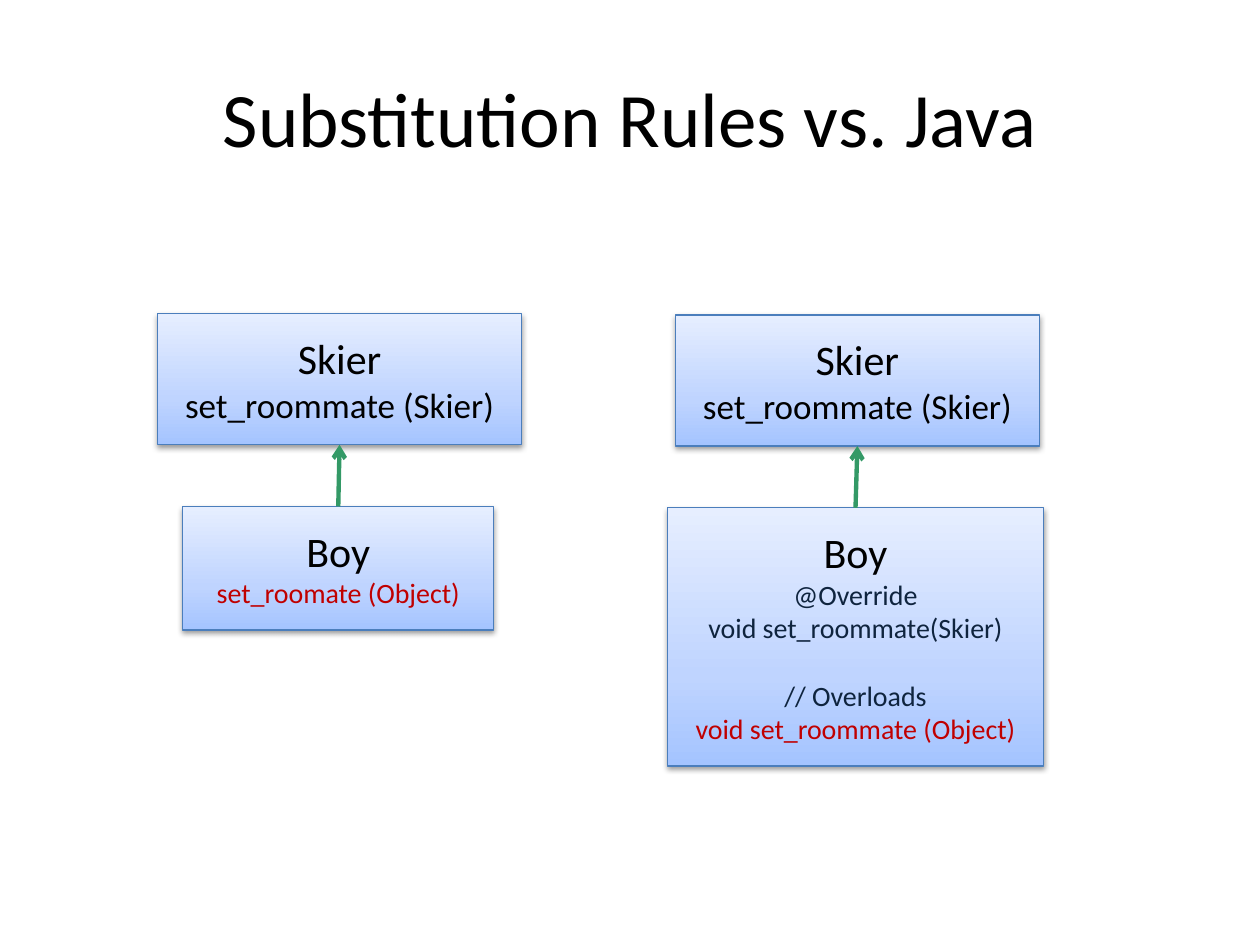
from copy import deepcopy

from lxml import etree
from pptx import Presentation
from pptx.dml.color import RGBColor
from pptx.enum.shapes import MSO_CONNECTOR, MSO_SHAPE
from pptx.enum.text import MSO_ANCHOR, MSO_AUTO_SIZE, PP_ALIGN
from pptx.oxml import parse_xml
from pptx.oxml.ns import nsdecls, qn
from pptx.util import Inches, Pt

COLORS = {
    "black": "000000",
    "navy": "0F243E",
    "red": "C00000",
    "border": "4B7EBC",
    "green": "339966",
}
GRADIENT = [(0, "A4C4FF"), (0.35, "BFD4FF"), (1, "E6EEFF")]
SHADOW = (
    f'<a:outerShdw {nsdecls("a")} blurRad="40000" dist="20000" dir="5400000" rotWithShape="0">'
    '<a:srgbClr val="000000"><a:alpha val="38000"/></a:srgbClr></a:outerShdw>'
)


def write_lines(tf, lines):
    for i, (text, size, color) in enumerate(lines):
        p = tf.paragraphs[0] if i == 0 else tf.add_paragraph()
        p.text = text
        p.alignment = PP_ALIGN.CENTER
        p.font.name = "Calibri"
        p.font.size = Pt(size)
        p.font.color.rgb = RGBColor.from_string(COLORS[color])


def add_class_box(s, left, top, width, height, lines):
    sp = s.shapes.add_shape(
        MSO_SHAPE.RECTANGLE, Inches(left), Inches(top), Inches(width), Inches(height)
    )
    sp.fill.gradient()
    sp.fill.gradient_angle = 90
    stops = sp._element.spPr.find(".//" + qn("a:gsLst"))
    stops.append(deepcopy(stops[-1]))
    for stop, (position, color) in zip(sp.fill.gradient_stops, GRADIENT):
        stop.position = position
        stop.color.rgb = RGBColor.from_string(color)
    sp.line.color.rgb = RGBColor.from_string(COLORS["border"])
    sp.line.width = Pt(0.75)
    sp.shadow.inherit = False
    sp._element.spPr.find(qn("a:effectLst")).append(parse_xml(SHADOW))
    tf = sp.text_frame
    tf.word_wrap = True
    tf.auto_size = MSO_AUTO_SIZE.SHAPE_TO_FIT_TEXT
    tf.vertical_anchor = MSO_ANCHOR.TOP
    tf.margin_left = tf.margin_right = Inches(0.2)
    tf.margin_top = tf.margin_bottom = Inches(0.15)
    write_lines(tf, lines)
    return sp


prs = Presentation()
prs.slide_width, prs.slide_height = Inches(10), Inches(7.5)
s = prs.slides.add_slide(prs.slide_layouts[6])

title = s.shapes.add_textbox(Inches(0.5), Inches(0.3), Inches(9), Inches(1.25))
title.text_frame.word_wrap = True
title.text_frame.vertical_anchor = MSO_ANCHOR.MIDDLE
write_lines(title.text_frame, [("Substitution Rules vs. Java", 44, "black")])

skier_lines = [("Skier", 24, "black"), ("set_roommate (Skier)", 20, "black")]
rule_lines = [("Boy", 24, "black"), ("set_roomate (Object)", 16, "red")]
java_lines = [
    ("Boy", 24, "black"),
    ("@Override", 16, "navy"),
    ("void set_roommate(Skier)", 16, "navy"),
    ("// Overloads", 16, "navy"),
    ("void set_roommate (Object)", 16, "red"),
]
hierarchies = [
    (1.25, 2.49, 1.45, 2.47, 0.98, rule_lines),
    (5.36, 2.5, 5.3, 2.98, 2.05, java_lines),
]
for skier_left, top, boy_left, boy_width, boy_height, boy_lines in hierarchies:
    skier_bottom, boy_top = top + 1.04, top + 1.53
    add_class_box(s, skier_left, top, 2.89, 1.04, skier_lines)
    boy = add_class_box(s, boy_left, boy_top, boy_width, boy_height, boy_lines)
    for p in boy.text_frame.paragraphs:
        if p.text == "// Overloads":
            p.space_before = Pt(19.5)

    arrow = s.shapes.add_connector(
        MSO_CONNECTOR.STRAIGHT,
        Inches(boy_left + boy_width / 2),
        Inches(boy_top),
        Inches(skier_left + 2.89 / 2),
        Inches(skier_bottom),
    )
    arrow.line.color.rgb = RGBColor.from_string(COLORS["green"])
    arrow.line.width = Pt(2.5)
    etree.SubElement(arrow.line._get_or_add_ln(), qn("a:tailEnd"), type="arrow")
    etree.SubElement(arrow._element.spPr, qn("a:effectLst"))

prs.save("out.pptx")
